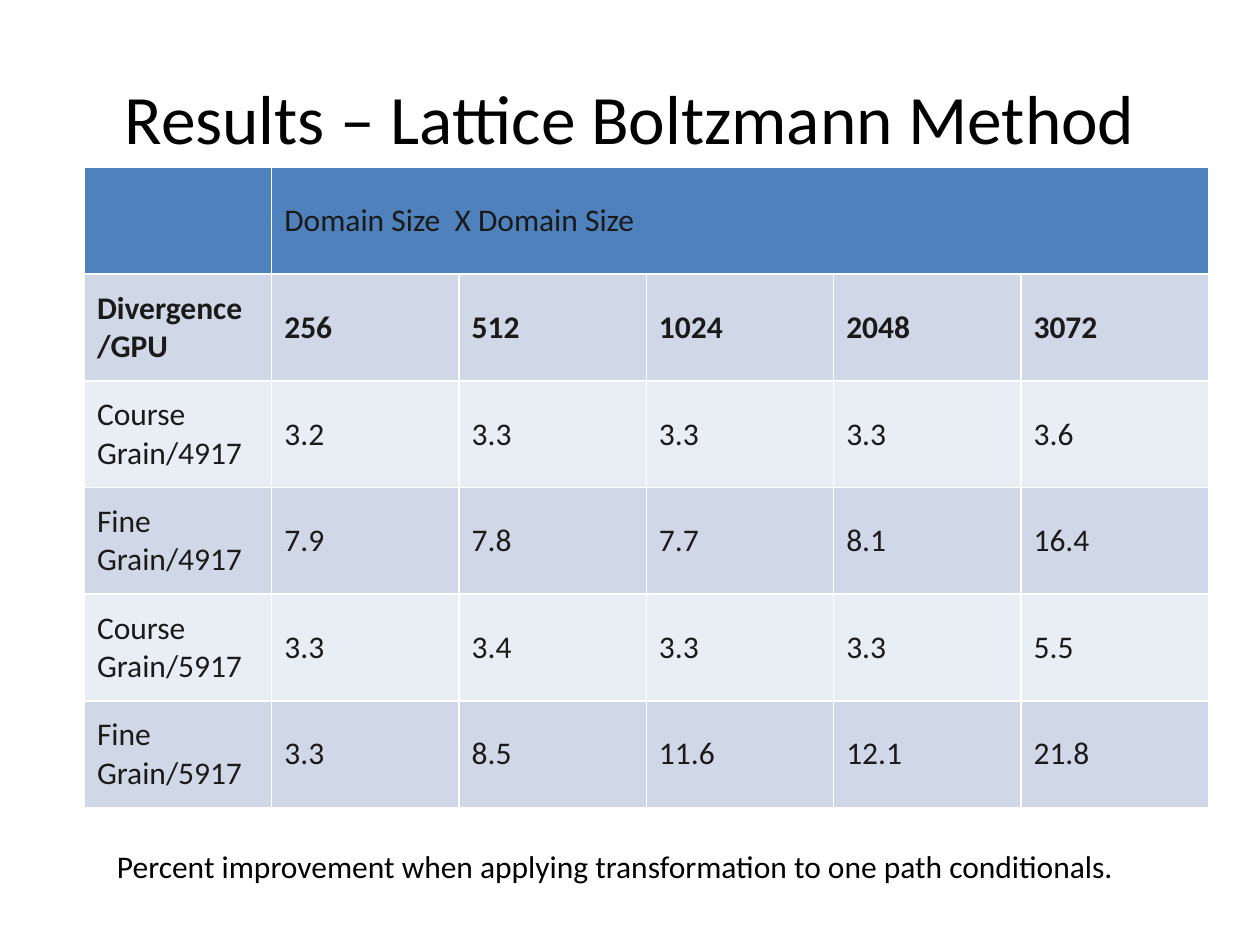
import pptx
import pptx.util
import pptx.dml.color
import pptx.enum.text

Inches = pptx.util.Inches
ANCHOR = pptx.enum.text.MSO_ANCHOR
ALIGN = pptx.enum.text.PP_ALIGN
FIT = pptx.enum.text.MSO_AUTO_SIZE

TITLE = "Results – Lattice Boltzmann Method"
NOTE = "Percent improvement when applying transformation to one path conditionals."
ROWS = [
    ["", "Domain Size  X Domain Size", "", "", "", ""],
    ["Divergence /GPU", "256", "512", "1024", "2048", "3072"],
    ["Course Grain/4917", "3.2", "3.3", "3.3", "3.3", "3.6"],
    ["Fine Grain/4917", "7.9", "7.8", "7.7", "8.1", "16.4"],
    ["Course Grain/5917", "3.3", "3.4", "3.3", "3.3", "5.5"],
    ["Fine Grain/5917", "3.3", "8.5", "11.6", "12.1", "21.8"],
]
COLORS = {"head": "4F81BD", "odd": "D0D8E8", "even": "E9EDF4",
          "cell": "1A1A1A", "text": "000000"}
BOXES = {"title": (0.5, 0.3, 9, 1.25), "table": (0.67, 1.33, 8.92, 5.08),
         "note": (0.83, 6.67, 8.42, 0.4)}


def color(name):
    return pptx.dml.color.RGBColor.from_string(COLORS[name])


def place(name):
    return [Inches(n) for n in BOXES[name]]


def write(frame, text, size=18, bold=False, ink="text"):
    frame.text = text
    font = frame.paragraphs[0].font
    if text:
        font = frame.paragraphs[0].runs[0].font
    style = {"name": "Calibri", "size": pptx.util.Pt(size), "bold": bold}
    for key, value in style.items():
        setattr(font, key, value)
    font.color.rgb = color(ink)


def add_title(slide):
    title = slide.shapes.title
    for key, value in zip(("left", "top", "width", "height"), place("title")):
        setattr(title, key, value)
    frame = title.text_frame
    write(frame, TITLE, 39.6)
    frame.auto_size = FIT.NONE
    frame.vertical_anchor = ANCHOR.MIDDLE
    frame.paragraphs[0].alignment = ALIGN.CENTER


def add_grid(slide):
    table = slide.shapes.add_table(len(ROWS), len(ROWS[0]), *place("table")).table
    table.cell(0, 1).merge(table.cell(0, len(ROWS[0]) - 1))
    for r, row in enumerate(ROWS):
        band = "head" if r == 0 else "odd" if r % 2 else "even"
        for c, text in enumerate(row):
            cell = table.cell(r, c)
            cell.fill.solid()
            cell.fill.fore_color.rgb = color(band)
            cell.vertical_anchor = ANCHOR.MIDDLE
            if not cell.is_spanned:
                write(cell.text_frame, text, bold=r == 1, ink="cell")


def add_note(slide):
    frame = slide.shapes.add_textbox(*place("note")).text_frame
    frame.word_wrap = True
    frame.auto_size = FIT.SHAPE_TO_FIT_TEXT
    write(frame, NOTE)


def main():
    deck = pptx.Presentation()
    deck.slide_width, deck.slide_height = Inches(10), Inches(7.5)
    slide = deck.slides.add_slide(deck.slide_layouts.get_by_name("Title Only"))
    add_title(slide)
    add_grid(slide)
    add_note(slide)
    deck.save("out.pptx")


if __name__ == "__main__":
    main()
